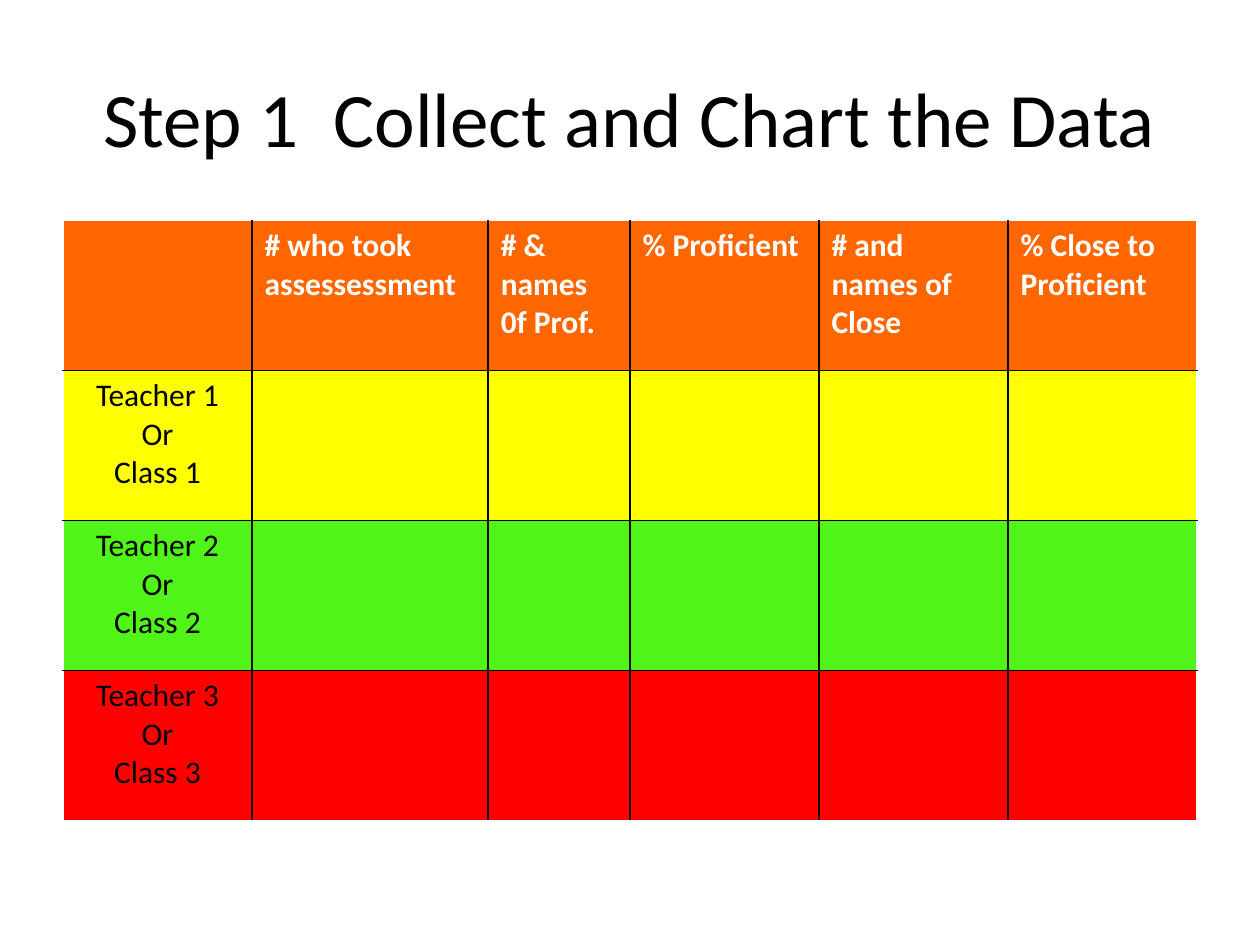
from lxml import etree
from pptx import Presentation
from pptx.dml.color import RGBColor
from pptx.enum.text import MSO_ANCHOR, PP_ALIGN
from pptx.oxml.ns import qn
from pptx.util import Pt

LEFT, CENTER = PP_ALIGN.LEFT, PP_ALIGN.CENTER
MIDDLE = MSO_ANCHOR.MIDDLE
BLACK = RGBColor(0x00, 0x00, 0x00)
WHITE = RGBColor(0xFF, 0xFF, 0xFF)
ORANGE = RGBColor(0xFF, 0x66, 0x00)
YELLOW = RGBColor(0xFF, 0xFF, 0x00)
GREEN = RGBColor(0x50, 0xF4, 0x19)
RED = RGBColor(0xFF, 0x00, 0x00)

HEADERS = ["", "# who took\nassessessment", "# & names 0f Prof.", "% Proficient",
           "# and names of  Close", "% Close to Proficient"]
ROW_FILLS = [ORANGE, YELLOW, GREEN, RED]
COL_WIDTHS = [108, 135, 81, 108, 108, 108]
ROW_HEIGHT = 85.7


def add_text(tf, text, size=18, color=BLACK, bold=False, align=LEFT):
    for i, line in enumerate(text.split("\n")):
        p = tf.paragraphs[0] if i == 0 else tf.add_paragraph()
        p.alignment = align
        p.font.size = Pt(size)
        if line:
            r = p.add_run()
            r.text = line
            r.font.name = "Calibri"
            r.font.size = Pt(size)
            r.font.bold = bold
            r.font.color.rgb = color


def add_border(cell, side, color):
    ln = etree.SubElement(cell._tc.get_or_add_tcPr(), qn(f"a:ln{side}"), w=str(Pt(1)))
    fill = etree.SubElement(ln, qn("a:solidFill"))
    etree.SubElement(fill, qn("a:srgbClr"), val=str(color))


prs = Presentation()
prs.slide_width, prs.slide_height = Pt(720), Pt(540)
s = prs.slides.add_slide(prs.slide_layouts[6])

title = s.shapes.add_textbox(Pt(36), Pt(21.6), Pt(648), Pt(90))
tf = title.text_frame
tf.word_wrap = True
tf.vertical_anchor = MIDDLE
add_text(tf, "Step 1  Collect and Chart the Data", size=44, align=CENTER)

n_rows, n_cols = len(ROW_FILLS), len(HEADERS)
frame = s.shapes.add_table(n_rows, n_cols, Pt(36), Pt(126),
                           Pt(sum(COL_WIDTHS)), Pt(ROW_HEIGHT * n_rows))
table = frame.table
for col, width in zip(table.columns, COL_WIDTHS):
    col.width = Pt(width)

for i, row_fill in enumerate(ROW_FILLS):
    table.rows[i].height = Pt(ROW_HEIGHT)
    for j, header in enumerate(HEADERS):
        cell = table.cell(i, j)
        outer = {"L": j == 0, "R": j == n_cols - 1, "T": i == 0, "B": i == n_rows - 1}
        for side, is_outer in outer.items():
            add_border(cell, side, WHITE if is_outer else BLACK)
        cell.fill.solid()
        cell.fill.fore_color.rgb = row_fill
        if i == 0:
            add_text(cell.text_frame, header, color=WHITE, bold=True)
        elif j == 0:
            add_text(cell.text_frame, f"Teacher {i}\nOr\nClass {i}", align=CENTER)

prs.save("out.pptx")
